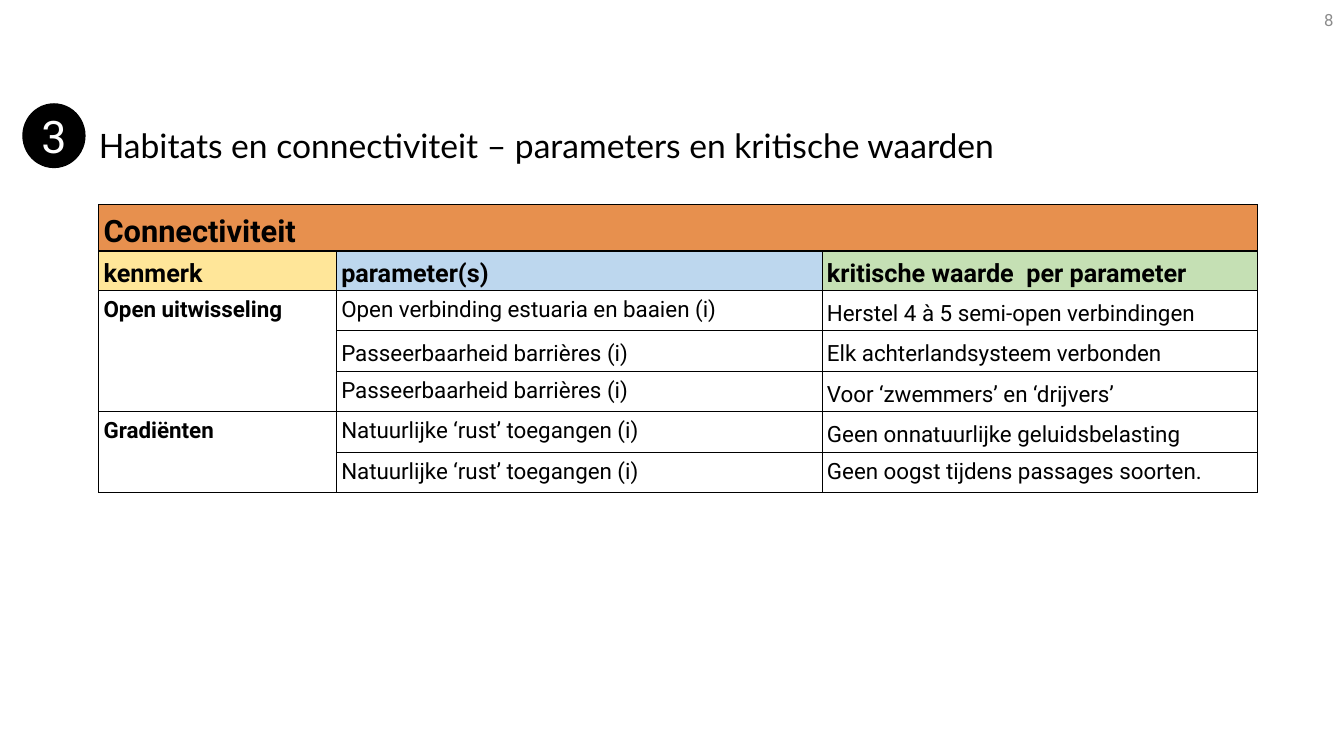
from lxml import etree
from pptx import Presentation
from pptx.dml.color import RGBColor
from pptx.enum.shapes import MSO_SHAPE
from pptx.enum.text import MSO_ANCHOR, PP_ALIGN
from pptx.oxml.ns import qn
from pptx.util import Cm, Pt

TOP, MIDDLE = MSO_ANCHOR.TOP, MSO_ANCHOR.MIDDLE
LEFT, CENTER, RIGHT = PP_ALIGN.LEFT, PP_ALIGN.CENTER, PP_ALIGN.RIGHT
OVAL = MSO_SHAPE.OVAL
COLORS = {
    "black": "000000", "white": "FFFFFF", "grey": "8C8C8C",
    "orange": "E7904E", "yellow": "FFE699", "blue": "BDD7EE", "green": "C5E0B4",
}


def write(holder, text, size, font="Roboto", color="black", bold=False, align=LEFT,
          spacing=1.0, after=0):
    """Put one formatted paragraph in a shape or table cell."""
    para = holder.text_frame.paragraphs[0]
    para.alignment = align
    para.line_spacing = spacing
    para.space_before, para.space_after = Pt(0), Pt(after)
    span = para.add_run()
    span.text = text
    span.font.name, span.font.size, span.font.bold = font, Pt(size), bold
    span.font.color.rgb = RGBColor.from_string(COLORS[color])


def style_cell(cell, fill, anchor):
    """Set a cell's margins, anchor, fill and thin black borders."""
    cell.margin_left = cell.margin_right = Cm(0.12)
    cell.margin_top = cell.margin_bottom = Cm(0)
    cell.vertical_anchor = anchor
    properties = cell._tc.get_or_add_tcPr()
    for side in ("a:lnL", "a:lnR", "a:lnT", "a:lnB"):
        border = etree.SubElement(properties, qn(side), w=str(Pt(1)))
        paint = etree.SubElement(border, qn("a:solidFill"))
        etree.SubElement(paint, qn("a:srgbClr"), val=COLORS["black"])
    cell.fill.solid()
    cell.fill.fore_color.rgb = RGBColor.from_string(COLORS[fill])


deck = Presentation()
deck.slide_width, deck.slide_height = Cm(33.87), Cm(19.05)
page = deck.slides.add_slide(deck.slide_layouts[5])

# Title
title = page.shapes.title
title.left, title.top, title.width, title.height = Cm(2.49), Cm(3.25), Cm(29.21), Cm(1.6)
frame = title.text_frame
frame.margin_left = frame.margin_right = frame.margin_top = frame.margin_bottom = 0
frame.vertical_anchor = TOP
frame.word_wrap = True
write(title, "Habitats en connectiviteit – parameters en kritische waarden", 24,
      font="Lato", spacing=0.9)

# Page number
number = page.shapes.add_textbox(Cm(26.24), Cm(0), Cm(7.62), Cm(1.02))
number.text_frame.word_wrap = True
number.text_frame.vertical_anchor = MIDDLE
write(number, "8", 12, color="grey", align=RIGHT)

# Chapter badge
badge = page.shapes.add_shape(OVAL, Cm(0.58), Cm(2.62), Cm(1.56), Cm(1.6))
badge.shadow.inherit = False
badge.fill.solid()
badge.fill.fore_color.rgb = RGBColor.from_string(COLORS["black"])
badge.line.color.rgb = RGBColor.from_string(COLORS["black"])
badge.line.width = Pt(1)
frame = badge.text_frame
frame.margin_left = frame.margin_right = frame.margin_top = frame.margin_bottom = 0
frame.vertical_anchor = MIDDLE
write(badge, "3", 32, color="white", align=CENTER)

# Table: each row holds its three texts; an empty text lies under a merged cell
rows = [
    ("Connectiviteit", "", ""),
    ("kenmerk", "parameter(s)", "kritische waarde  per parameter"),
    ("Open uitwisseling", "Open verbinding estuaria en baaien (i)",
     "Herstel 4 à 5 semi-open verbindingen"),
    ("", "Passeerbaarheid barrières (i)", "Elk achterlandsysteem verbonden"),
    ("", "Passeerbaarheid barrières (i)", "Voor ‘zwemmers’ en ‘drijvers’"),
    ("Gradiënten", "Natuurlijke ‘rust’ toegangen (i)",
     "Geen onnatuurlijke geluidsbelasting"),
    ("", "Natuurlijke ‘rust’ toegangen (i)", "Geen oogst tijdens passages soorten."),
]
column_widths = [5.99, 12.24, 10.98]
row_heights = [1.07, 0.99] + [1.02] * 5
header_fills = [["orange"] * 3, ["yellow", "blue", "green"]]
header_sizes = [22, 18]
middle_body_cells = {(2, 2), (3, 1), (3, 2), (4, 2), (5, 2)}

table = page.shapes.add_table(len(rows), 3, Cm(2.49), Cm(5.16),
                              Cm(sum(column_widths)), Cm(sum(row_heights))).table
table.first_row = table.horz_banding = False
for column, width in zip(table.columns, column_widths):
    column.width = Cm(width)
for row, height in zip(table.rows, row_heights):
    row.height = Cm(height)
for start, end in [((0, 0), (0, 2)), ((2, 0), (4, 0)), ((5, 0), (6, 0))]:
    table.cell(*start).merge(table.cell(*end))

for r, texts in enumerate(rows):
    is_header = r < len(header_fills)
    for c, text in enumerate(texts):
        cell = table.cell(r, c)
        centered = is_header or (r, c) in middle_body_cells
        style_cell(cell, header_fills[r][c] if is_header else "white",
                   MIDDLE if centered else TOP)
        if text:
            write(cell, text, header_sizes[r] if is_header else 16,
                  bold=is_header or c == 0, spacing=1.25,
                  after=0 if text == "Gradiënten" else 8)

deck.save("out.pptx")
